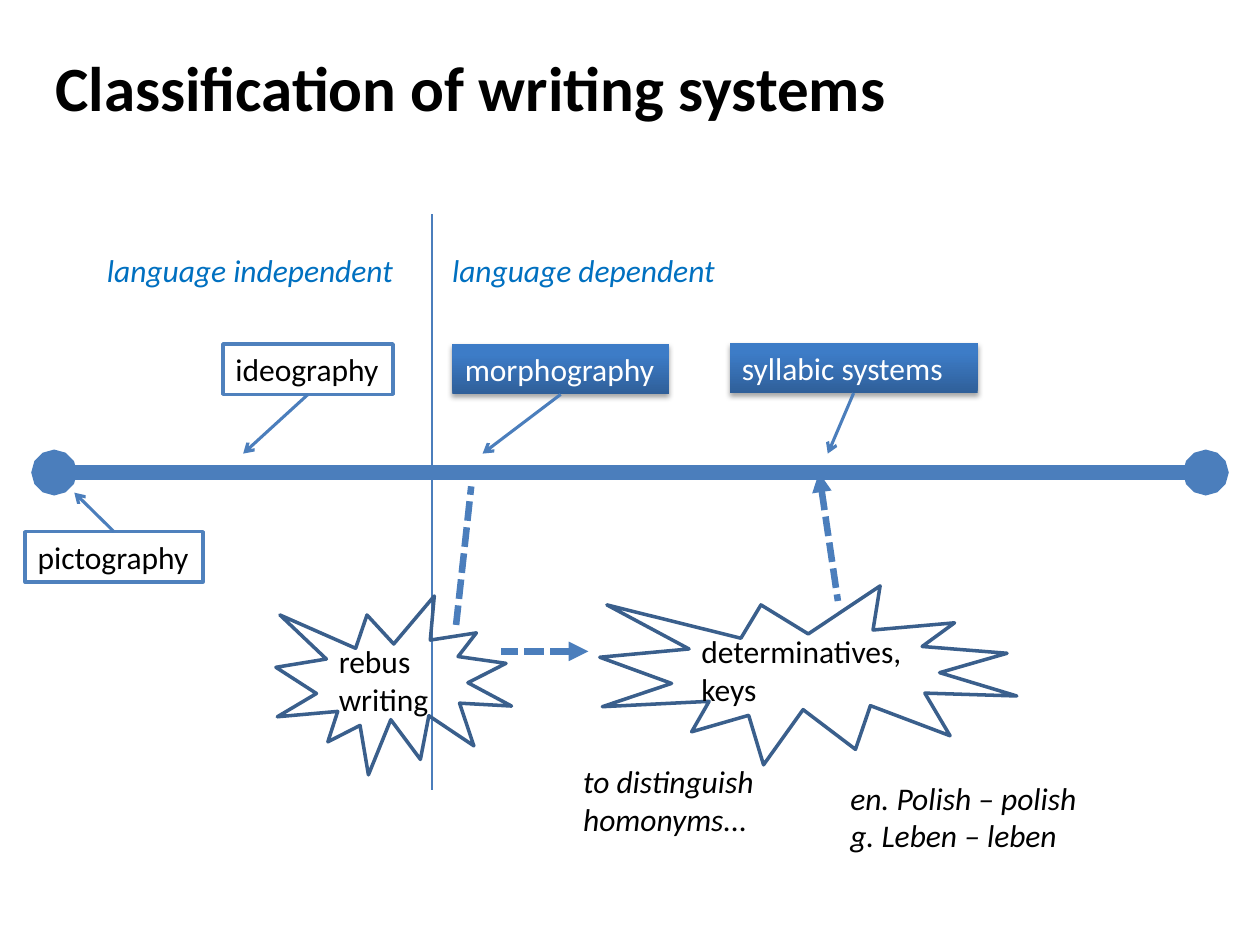
from dataclasses import dataclass
from typing import Optional

from lxml.etree import SubElement
from pptx import Presentation
from pptx.dml.color import RGBColor
from pptx.enum.dml import MSO_LINE
from pptx.enum.shapes import MSO_CONNECTOR, MSO_SHAPE
from pptx.enum.text import MSO_ANCHOR, MSO_AUTO_SIZE, PP_ALIGN
from pptx.oxml.ns import qn
from pptx.util import Inches, Pt

LINE_BLUE, BOX_BLUE, SEAL_BLUE = "4B7EBC", "4F81BD", "3A5F8C"
BLACK, WHITE, LABEL_BLUE = "000000", "FFFFFF", "0070C0"
TOP, BOTTOM = 0, 2
AXIS_Y = 3.75


@dataclass
class Label:
    text: str
    left: float
    top: float
    width: float
    height: float = 0.4
    color: str = BLACK
    wrap: bool = True


@dataclass
class SystemBox:
    label: Label
    side: int
    target: tuple[float, float]
    gradient: bool = False


@dataclass
class Line:
    start: tuple[float, float]
    end: tuple[float, float]
    width: float
    head: Optional[str] = None
    tail: Optional[str] = None
    dashed: bool = False


SYSTEM_BOXES = [
    SystemBox(Label("pictography", 0.2, 4.22, 1.41, wrap=False), TOP, (0.59, 3.91)),
    SystemBox(Label("ideography", 1.77, 2.73, 1.35, wrap=False), BOTTOM, (1.93, 3.6)),
    SystemBox(Label("morphography", 3.59, 2.73, 1.72, color=WHITE, wrap=False),
              BOTTOM, (3.83, 3.6), True),
    SystemBox(Label("syllabic systems", 5.79, 2.72, 1.97, color=WHITE),
              BOTTOM, (6.57, 3.6), True),
]
LINES = [
    Line((0.43, AXIS_Y), (9.57, AXIS_Y), 8.75, head="oval", tail="oval"),
    Line((3.43, 1.7), (3.43, 6.27), 1.25),
    Line((3.62, 4.96), (3.74, 3.86), 3.75, dashed=True),
    Line((4.67, 5.17), (3.98, 5.17), 3.75, head="triangle", dashed=True),
    Line((6.5, AXIS_Y), (6.65, 4.77), 3.75, head="triangle", dashed=True),
]
SEALS = [
    Label("rebus writing", 2.19, 4.73, 1.87, 1.42),
    Label("determinatives, keys", 4.76, 4.65, 3.31, 1.42),
]
NOTES = [
    Label("language independent", 0.75, 1.94, 2.51, color=LABEL_BLUE, wrap=False),
    Label("language dependent", 3.49, 1.94, 2.37, color=LABEL_BLUE, wrap=False),
    Label("to distinguish homonyms...", 4.53, 6, 1.88, 0.71),
    Label("en. Polish – polish\ng. Leben – leben", 6.65, 6.13, 3.15, 1.01),
]
TITLE = Label("Classification of writing systems", 0.04, 0.06, 7.39, 1.25)


def rgb(color: str) -> RGBColor:
    return RGBColor.from_string(color)


def bounds(label: Label) -> list[int]:
    return [Inches(value) for value in (label.left, label.top, label.width, label.height)]


def write_text(shape, label: Label, anchor=MSO_ANCHOR.TOP, alignment=PP_ALIGN.LEFT,
               grow: bool = True, **font_format) -> None:
    frame = shape.text_frame
    frame.text = label.text
    frame_format = {
        "word_wrap": label.wrap,
        "vertical_anchor": anchor,
        "auto_size": MSO_AUTO_SIZE.SHAPE_TO_FIT_TEXT if grow else MSO_AUTO_SIZE.NONE,
    }
    for name, value in frame_format.items():
        setattr(frame, name, value)
    for paragraph in frame.paragraphs:
        paragraph.alignment = alignment
        font = paragraph.runs[0].font
        for name, value in {"name": "Calibri", "size": Pt(18), **font_format}.items():
            setattr(font, name, value)
        font.color.rgb = rgb(label.color)


def add_text(slide, label: Label, **text_format) -> None:
    write_text(slide.shapes.add_textbox(*bounds(label)), label, **text_format)


def add_outlined(slide, preset: MSO_SHAPE, label: Label, outline: str):
    shape = slide.shapes.add_shape(preset, *bounds(label))
    shape.shadow.inherit = False
    shape.line.color.rgb = rgb(outline)
    shape.line.width = Pt(2)
    return shape


def add_line(slide, line: Line):
    points = [Inches(value) for value in (*line.start, *line.end)]
    connector = slide.shapes.add_connector(MSO_CONNECTOR.STRAIGHT, *points)
    connector.line.color.rgb = rgb(LINE_BLUE)
    connector.line.width = Pt(line.width)
    if line.dashed:
        connector.line.dash_style = MSO_LINE.SQUARE_DOT
    outline = connector.line._get_or_add_ln()
    for tag, kind in (("a:headEnd", line.head), ("a:tailEnd", line.tail)):
        if kind:
            SubElement(outline, qn(tag), type=kind)
    SubElement(connector._element.spPr, qn("a:effectLst"))
    return connector


def apply_gradient(shape) -> None:
    shape.line.fill.background()
    shape.fill.gradient()
    shape.fill.gradient_angle = 90
    stops = ((0, "2F5F99"), (0.8, "3D7CC7"))
    for stop, (position, color) in zip(shape.fill.gradient_stops, stops):
        stop.position = position
        stop.color.rgb = rgb(color)
    effects = shape._element.spPr.find(qn("a:effectLst"))
    shadow = SubElement(effects, qn("a:outerShdw"), blurRad=str(Pt(3.1)),
                        dist=str(Pt(1.8)), dir="5400000", rotWithShape="0")
    shadow_color = SubElement(shadow, qn("a:srgbClr"), val=BLACK)
    SubElement(shadow_color, qn("a:alpha"), val="35000")


def add_system_box(slide, box: SystemBox) -> None:
    label = box.label
    shape = add_outlined(slide, MSO_SHAPE.RECTANGLE, label, BOX_BLUE)
    if box.gradient:
        apply_gradient(shape)
    else:
        shape.fill.solid()
        shape.fill.fore_color.rgb = rgb(WHITE)
    write_text(shape, label)
    edge = label.top + (label.height if box.side == BOTTOM else 0)
    start = (label.left + label.width / 2, edge)
    arrow = add_line(slide, Line(start, box.target, 1.75, tail="arrow"))
    arrow.begin_connect(shape, box.side)


def add_seal(slide, label: Label) -> None:
    shape = add_outlined(slide, MSO_SHAPE.EXPLOSION1, label, SEAL_BLUE)
    shape.fill.background()
    write_text(shape, label, anchor=MSO_ANCHOR.MIDDLE, grow=False)


def main() -> None:
    presentation = Presentation()
    presentation.slide_width = Inches(10)
    presentation.slide_height = Inches(7.5)
    slide = presentation.slides.add_slide(presentation.slide_layouts[6])
    for line in LINES:
        add_line(slide, line)
    for box in SYSTEM_BOXES:
        add_system_box(slide, box)
    for seal in SEALS:
        add_seal(slide, seal)
    for note in NOTES:
        add_text(slide, note, italic=True)
    add_text(slide, TITLE, anchor=MSO_ANCHOR.MIDDLE, alignment=PP_ALIGN.CENTER,
             grow=False, size=Pt(36), bold=True)
    presentation.save("out.pptx")


if __name__ == "__main__":
    main()
